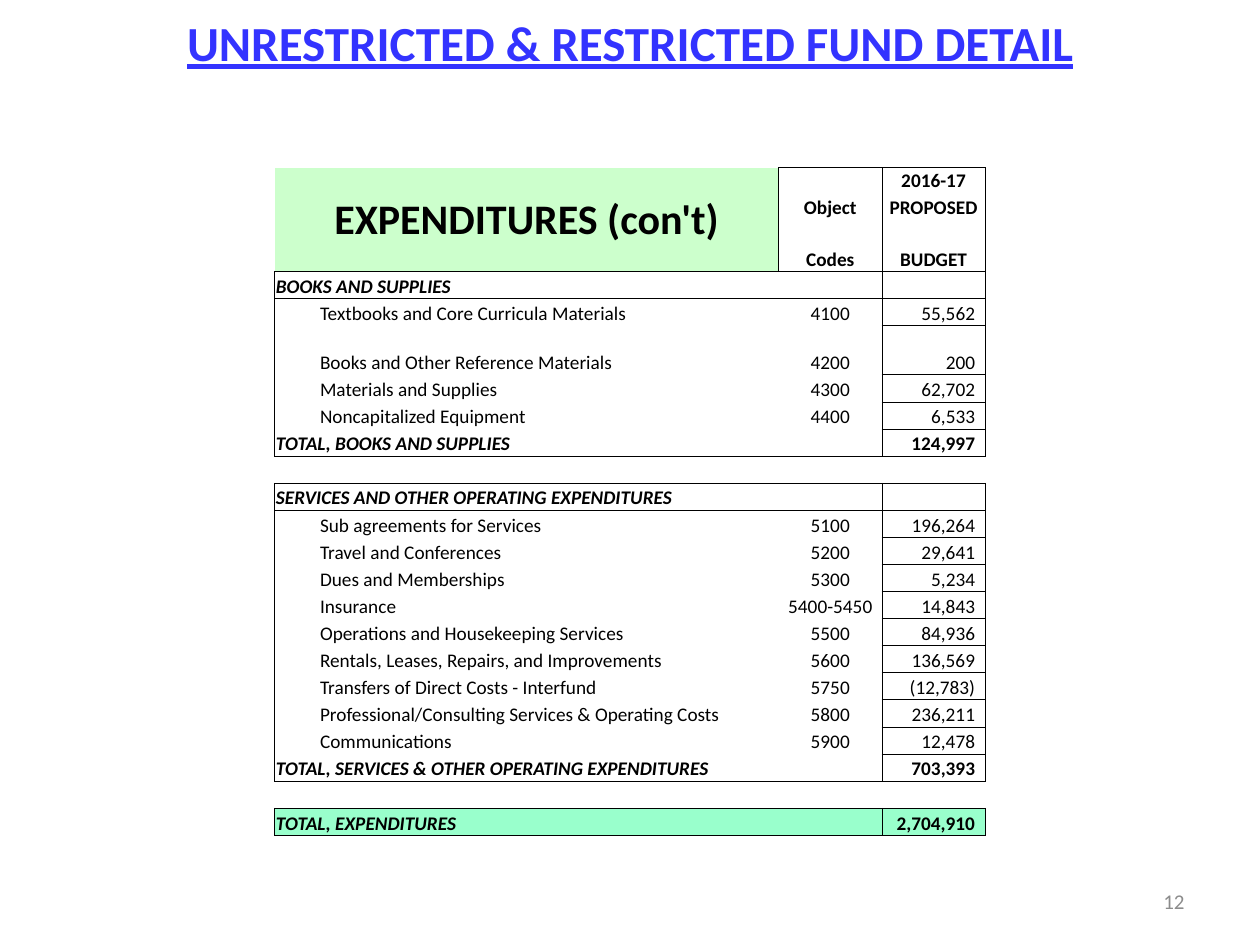
from dataclasses import dataclass

from lxml.etree import SubElement
from pptx import Presentation
from pptx.dml.color import RGBColor
from pptx.enum.text import MSO_ANCHOR, PP_ALIGN
from pptx.oxml import parse_xml
from pptx.oxml.ns import nsdecls, qn
from pptx.util import Inches, Pt


@dataclass(frozen=True)
class Theme:
    font: str = "Calibri"
    title: RGBColor = RGBColor(0x33, 0x33, 0xFF)
    ink: RGBColor = RGBColor(0, 0, 0)
    muted: RGBColor = RGBColor(0x8C, 0x8C, 0x8C)
    header: RGBColor = RGBColor(0xCC, 0xFF, 0xCC)
    total: RGBColor = RGBColor(0x99, 0xFF, 0xCC)
    title_size: Pt = Pt(28)
    heading_size: Pt = Pt(24)
    body_size: Pt = Pt(11)
    number_size: Pt = Pt(12)
    border: Pt = Pt(0.5)


THEME = Theme()
NO_STYLE_NO_GRID = "{2D5ABB26-0587-4C30-8999-92F81FD0307C}"
LABEL, ITEM, CODE, BUDGET = range(4)

SECTIONS = [
    ("BOOKS AND SUPPLIES", [
        ("Textbooks and Core Curricula Materials", "4100", "55,562"),
        ("Books and Other Reference Materials", "4200", "200"),
        ("Materials and Supplies", "4300", "62,702"),
        ("Noncapitalized Equipment", "4400", "6,533"),
    ], "TOTAL, BOOKS AND SUPPLIES", "124,997"),
    ("SERVICES AND OTHER OPERATING EXPENDITURES", [
        ("Sub agreements for Services", "5100", "196,264"),
        ("Travel and Conferences", "5200", "29,641"),
        ("Dues and Memberships", "5300", "5,234"),
        ("Insurance", "5400-5450", "14,843"),
        ("Operations and Housekeeping Services", "5500", "84,936"),
        ("Rentals, Leases, Repairs, and Improvements", "5600", "136,569"),
        ("Transfers of Direct Costs - Interfund", "5750", "(12,783)"),
        ("Professional/Consulting Services & Operating Costs", "5800", "236,211"),
        ("Communications", "5900", "12,478"),
    ], "TOTAL, SERVICES & OTHER OPERATING EXPENDITURES", "703,393"),
]


def write(frame, text, size, color=THEME.ink, align=PP_ALIGN.LEFT,
          bold=False, italic=False, underline=False):
    paragraph = frame.paragraphs[0]
    paragraph.text = text
    paragraph.alignment = align
    font = paragraph.font
    font.name, font.size, font.color.rgb = THEME.font, size, color
    font.bold, font.italic, font.underline = bold, italic, underline


def outline(table, top, left, bottom, right):
    """Draw the outer edge of a block of cells."""
    for row in range(top, bottom + 1):
        for column in range(left, right + 1):
            edges = {"L": column == left, "R": column == right,
                     "T": row == top, "B": row == bottom}
            properties = table.cell(row, column)._tc.get_or_add_tcPr()
            sides = [side for side, drawn in edges.items() if drawn]
            for position, side in enumerate(sides):
                properties.insert(position, parse_xml(
                    f'<a:ln{side} {nsdecls("a")} w="{THEME.border}"><a:solidFill>'
                    f'<a:srgbClr val="{THEME.ink}"/></a:solidFill></a:ln{side}>'))


presentation = Presentation()
presentation.slide_width, presentation.slide_height = Inches(10), Inches(7.5)
slide = presentation.slides.add_slide(presentation.slide_layouts[6])

title = slide.shapes.add_textbox(
    Inches(0), Inches(-0.25), Inches(10), Inches(0.88)).text_frame
title.word_wrap = True
title.margin_top = Inches(0.35)
write(title, "UNRESTRICTED & RESTRICTED FUND DETAIL", THEME.title_size, THEME.title,
      PP_ALIGN.CENTER, bold=True, underline=True)

page_number = slide.shapes.add_textbox(
    Inches(7.17), Inches(6.95), Inches(2.33), Inches(0.4)).text_frame
page_number.word_wrap = True
page_number.vertical_anchor = MSO_ANCHOR.MIDDLE
write(page_number, "12", THEME.number_size, THEME.muted, PP_ALIGN.RIGHT)

# Rows of text, with the first row of each section and of the closing total noted
rows = [("", "", "", "2016-17"), ("", "", "Object", "PROPOSED"), ("", "", "Codes", "BUDGET")]
blocks = []
for heading, items, total_label, total in SECTIONS:
    first = len(rows)
    rows.append((heading, "", "", ""))
    rows += [("", *item) for item in items]
    rows.append((total_label, "", "", total))
    blocks.append((first, len(rows) - 1))
    rows.append(("", "", "", ""))
grand_total = len(rows)
rows.append(("TOTAL, EXPENDITURES", "", "", "2,704,910"))
blocks.append((grand_total, grand_total))

table = slide.shapes.add_table(
    len(rows), 4, Inches(2.18), Inches(1.33), Inches(5.64), Inches(5.3)).table
table.first_row = table.horz_banding = False
table._tbl.tblPr.find(qn("a:tableStyleId")).text = NO_STYLE_NO_GRID
for column, width in zip(table.columns, (0.35, 3.65, 0.82, 0.82)):
    column.width = Inches(width)
special_heights = {0: 0.2, 2: 0.41, 5: 0.39}
for index, row in enumerate(table.rows):
    row.height = Inches(special_heights.get(index, 4.3 / 20))

for row, texts in enumerate(rows):
    in_header = row < 3
    for column, text in enumerate(texts):
        cell = table.cell(row, column)
        cell.margin_left = cell.margin_right = cell.margin_top = Inches(0.01)
        cell.margin_bottom = 0
        cell.vertical_anchor = MSO_ANCHOR.BOTTOM
        if row == grand_total:
            cell.fill.solid()
            cell.fill.fore_color.rgb = THEME.total
        else:
            cell.fill.background()
        align = PP_ALIGN.LEFT
        if in_header or column == CODE:
            align = PP_ALIGN.CENTER
        elif column == BUDGET:
            align = PP_ALIGN.RIGHT
            cell.margin_right = Inches(0.08)
        if text:
            write(cell.text_frame, text, THEME.body_size, align=align,
                  bold=in_header or bool(texts[LABEL]), italic=column == LABEL)
        else:
            # Keeps empty cells from stretching their rows
            ending = SubElement(cell.text_frame.paragraphs[0]._p, qn("a:endParaRPr"))
            ending.set("sz", str(THEME.body_size.centipoints))
    if texts[LABEL]:
        last = CODE if row == grand_total else ITEM
        table.cell(row, LABEL).merge(table.cell(row, last))

header = table.cell(0, LABEL)
header.merge(table.cell(2, ITEM))
header.fill.solid()
header.fill.fore_color.rgb = THEME.header
header.vertical_anchor = MSO_ANCHOR.MIDDLE
write(header.text_frame, "EXPENDITURES (con't)", THEME.heading_size,
      align=PP_ALIGN.CENTER, bold=True)

for column in (CODE, BUDGET):
    outline(table, 0, column, 2, column)
for first, last in blocks:
    outline(table, first, LABEL, last, CODE)
    for row in range(first, last + 1):
        outline(table, row, BUDGET, row, BUDGET)

presentation.save("out.pptx")
